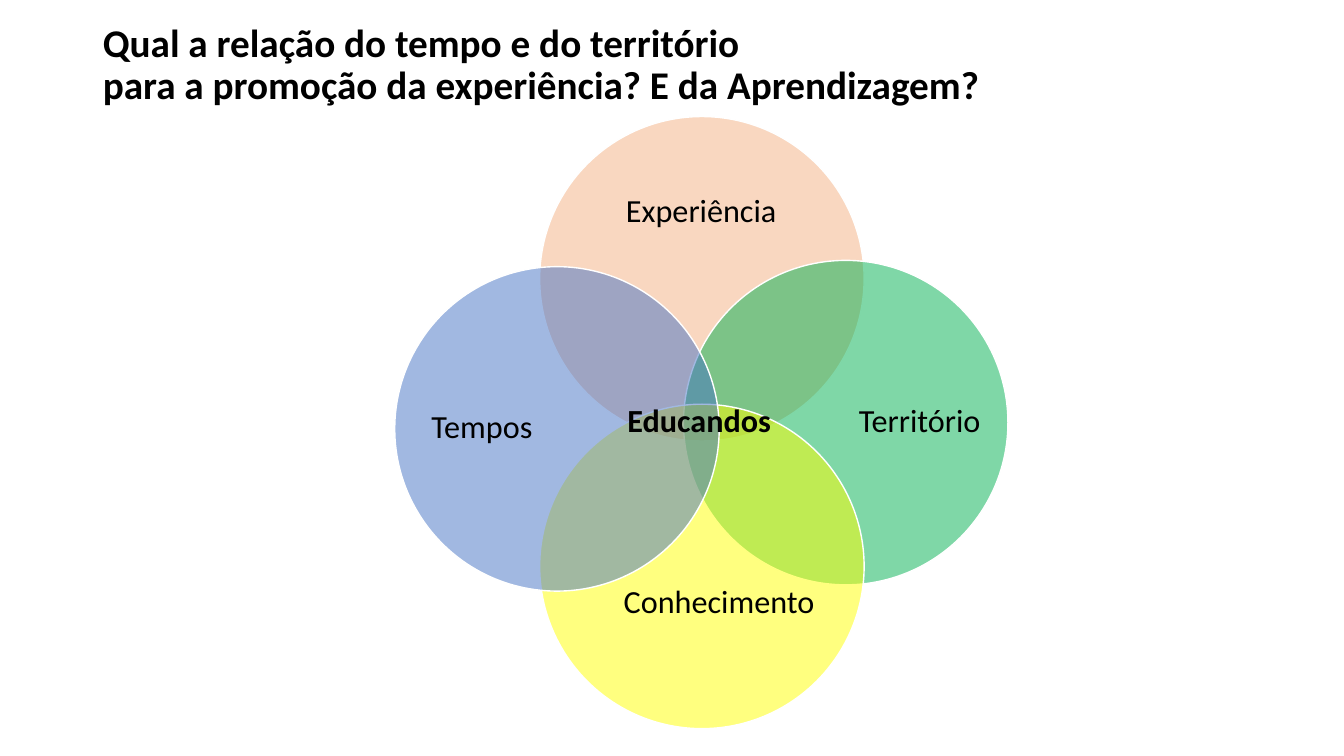
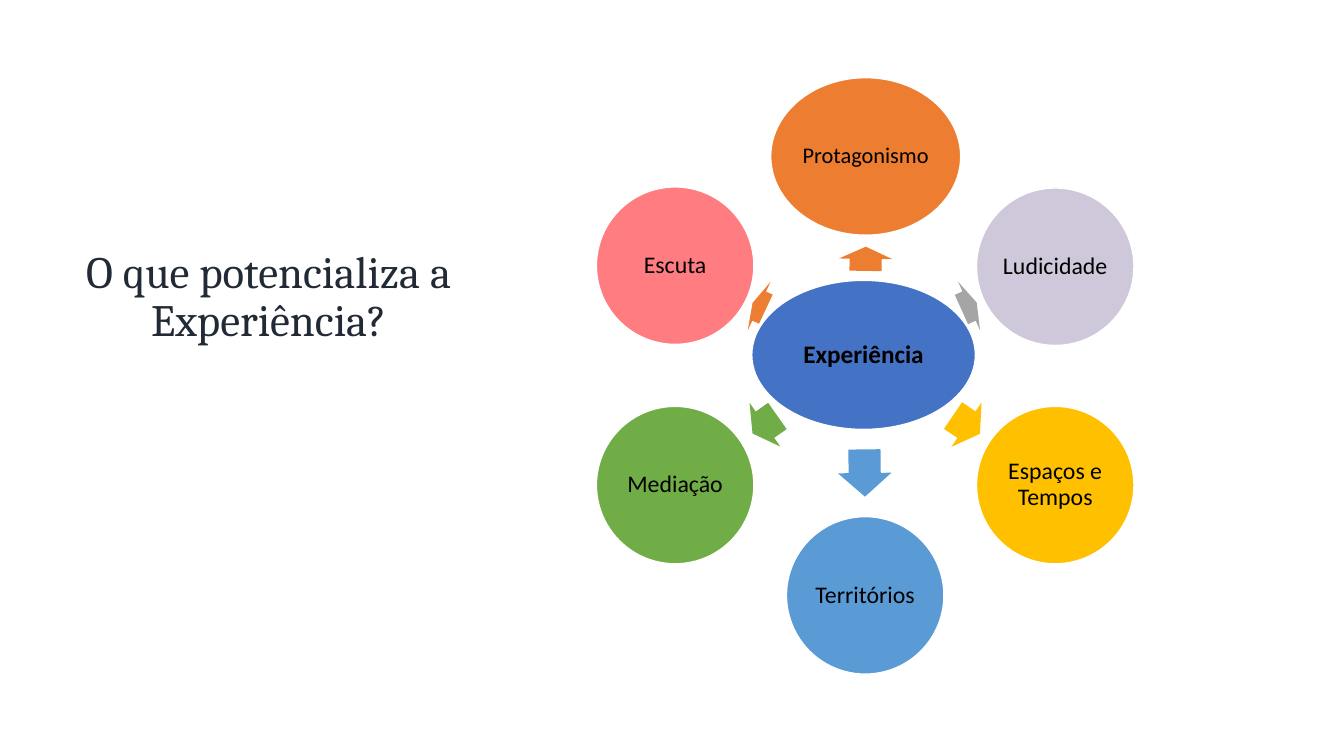
"""Build two slides on time, territory and experience in learning."""
from dataclasses import dataclass
from math import cos, radians, sin
from typing import NamedTuple

from lxml.etree import SubElement
from pptx import Presentation
from pptx.dml.color import RGBColor
from pptx.enum.shapes import MSO_SHAPE
from pptx.enum.text import MSO_ANCHOR, PP_ALIGN
from pptx.oxml.ns import qn
from pptx.shapes.autoshape import Shape
from pptx.slide import Slide
from pptx.util import Emu, Pt

EMU_PER_PX = 9525


class TextStyle(NamedTuple):
    """Type settings of one kind of text."""
    size: int
    bold: bool = False
    font: str = "Calibri"
    color: str = "000000"
    align: PP_ALIGN = PP_ALIGN.CENTER


@dataclass(frozen=True)
class Theme:
    """Colours and type styles shared by the slides."""
    white: str = "FFFFFF"
    peach: str = "F4B183"
    emerald: str = "00B050"
    yellow: str = "FFFF00"
    blue: str = "4472C4"
    orange: str = "ED7D31"
    gray: str = "A5A5A5"
    lilac: str = "CEC8DA"
    gold: str = "FFC000"
    sky: str = "5B9BD5"
    green: str = "70AD47"
    coral: str = "FF7C80"
    title: TextStyle = TextStyle(28, True, align=PP_ALIGN.LEFT)
    question: TextStyle = TextStyle(32, font="Cambria", color="222A35")
    venn: TextStyle = TextStyle(23)
    venn_core: TextStyle = TextStyle(23, True)
    hub: TextStyle = TextStyle(18, True)
    wide_node: TextStyle = TextStyle(16)
    node: TextStyle = TextStyle(17)


THEME = Theme()


class Box(NamedTuple):
    """A box given by its centre and size in px."""
    x: int
    y: int
    width: int
    height: int


class VennSet(NamedTuple):
    """A translucent circle of the Venn diagram."""
    x: int
    y: int
    color: str


class Label(NamedTuple):
    """A free text centred on a point."""
    text: str
    x: int
    y: int
    style: TextStyle


class Arrow(NamedTuple):
    """A block arrow between the hub and a node."""
    x: int
    y: int
    length: int
    rotation: float
    color: str


class Node(NamedTuple):
    """A circle around the hub with the arrow that leads to it."""
    text: str
    color: str
    arrow: Arrow
    width: int = 150
    style: TextStyle = THEME.node


VENN_DIAMETER = 309
VENN_SETS = (
    VennSet(668, 265, THEME.peach),
    VennSet(805, 402, THEME.emerald),
    VennSet(668, 539, THEME.yellow),
    VennSet(530, 408, THEME.blue),
)
VENN_LABELS = (
    Label("Experiência", 668, 202, THEME.venn),
    Label("Território", 876, 402, THEME.venn),
    Label("Tempos", 459, 408, THEME.venn),
    Label("Conhecimento", 685, 574, THEME.venn),
    Label("Educandos", 666, 402, THEME.venn_core),
)
NODE_HEIGHT = 150
ARROW_HEIGHT = 51
RING_X, RING_Y, RING_RADIUS = 824, 358, 209
NODES = (
    Node("Protagonismo", THEME.orange, Arrow(824, 246, 23, 270.8, THEME.orange),
         181, THEME.wide_node),
    Node("Ludicidade", THEME.lilac, Arrow(923, 291, 16, 335.7, THEME.gray)),
    Node("Espaços e Tempos", THEME.gold, Arrow(920, 404, 31, 34.3, THEME.gold)),
    Node("Territórios", THEME.sky, Arrow(823, 450, 45, 89.3, THEME.sky)),
    Node("Mediação", THEME.green, Arrow(728, 404, 29, 144.9, THEME.green)),
    Node("Escuta", THEME.coral, Arrow(723, 291, 14, 205.2, THEME.orange)),
)


def px(length: int) -> Emu:
    """Turn px into EMU."""
    return Emu(length * EMU_PER_PX)


def frame(box: Box) -> tuple[Emu, Emu, Emu, Emu]:
    """Return left, top, width and height of a centred box."""
    return (px(box.x - box.width // 2), px(box.y - box.height // 2),
            px(box.width), px(box.height))


def apply_format(target: object, values: dict[str, object]) -> None:
    """Set every format value on the target."""
    for name, value in values.items():
        setattr(target, name, value)


def write_text(shape: Shape, text: str, style: TextStyle, inset: int) -> None:
    """Write one styled paragraph into a shape."""
    text_frame = shape.text_frame
    sides = ("left", "right", "top", "bottom")
    apply_format(text_frame, {
        "word_wrap": True, "vertical_anchor": MSO_ANCHOR.MIDDLE,
        **{f"margin_{side}": px(inset) for side in sides}})
    paragraph = text_frame.paragraphs[0]
    paragraph.text = text
    apply_format(paragraph, {"alignment": style.align, "line_spacing": 0.9})
    for run in paragraph.runs:
        apply_format(run.font, {"size": Pt(style.size), "bold": style.bold, "name": style.font})
        run.font.color.rgb = RGBColor.from_string(style.color)


def add_text(slide: Slide, box: Box, text: str, style: TextStyle, inset: int = 0) -> None:
    """Add a text box."""
    write_text(slide.shapes.add_textbox(*frame(box)), text, style, inset)


def add_filled(slide: Slide, kind: MSO_SHAPE, box: Box, color: str) -> Shape:
    """Add a flat filled shape without outline."""
    shape = slide.shapes.add_shape(kind, *frame(box))
    shape.shadow.inherit = False
    shape.fill.solid()
    shape.fill.fore_color.rgb = RGBColor.from_string(color)
    shape.line.fill.background()
    return shape


def add_ellipse(slide: Slide, box: Box, color: str) -> Shape:
    """Add an ellipse with a thin white outline."""
    ellipse = add_filled(slide, MSO_SHAPE.OVAL, box, color)
    ellipse.line.color.rgb = RGBColor.from_string(THEME.white)
    ellipse.line.width = Pt(1)
    return ellipse


def add_venn_set(slide: Slide, venn_set: VennSet) -> None:
    """Add a half-transparent circle."""
    box = Box(venn_set.x, venn_set.y, VENN_DIAMETER, VENN_DIAMETER)
    circle = add_ellipse(slide, box, venn_set.color)
    color = circle._element.spPr.find(qn("a:solidFill")).find(qn("a:srgbClr"))
    SubElement(color, qn("a:alpha")).set("val", "50000")


def add_arrow(slide: Slide, arrow: Arrow) -> None:
    """Add a rotated block arrow."""
    box = Box(arrow.x, arrow.y, arrow.length, ARROW_HEIGHT)
    shape = add_filled(slide, MSO_SHAPE.RIGHT_ARROW, box, arrow.color)
    shape.adjustments[0] = 0.6
    shape.adjustments[1] = 0.5
    shape.rotation = arrow.rotation


def build_venn_slide(slide: Slide) -> None:
    """Draw the four overlapping sets and their labels."""
    add_text(slide, Box(640, 62, 1104, 47),
             "Qual a relação do tempo e do território\n"
             "para a promoção da experiência? E da Aprendizagem?", THEME.title, 10)
    for venn_set in VENN_SETS:
        add_venn_set(slide, venn_set)
    for label in VENN_LABELS:
        add_text(slide, Box(label.x, label.y, 230, 48), label.text, label.style)


def build_radial_slide(slide: Slide) -> None:
    """Draw the hub with its ring of nodes."""
    add_text(slide, Box(256, 284, 468, 120),
             "O que potencializa a Experiência?", THEME.question, 10)
    hub = add_ellipse(slide, Box(822, 338, 213, 142), THEME.blue)
    write_text(hub, "Experiência", THEME.hub, 2)
    for index, node in enumerate(NODES):
        add_arrow(slide, node.arrow)
        angle = radians(index * 360 / len(NODES) - 90)
        box = Box(RING_X + round(RING_RADIUS * cos(angle)),
                  RING_Y + round(RING_RADIUS * sin(angle)), node.width, NODE_HEIGHT)
        write_text(add_ellipse(slide, box, node.color), node.text, node.style, 2)


def main() -> None:
    """Build and save the presentation."""
    presentation = Presentation()
    apply_format(presentation, {"slide_width": px(1280), "slide_height": px(720)})
    for build in (build_venn_slide, build_radial_slide):
        build(presentation.slides.add_slide(presentation.slide_layouts[6]))
    presentation.save("out.pptx")


if __name__ == "__main__":
    main()
